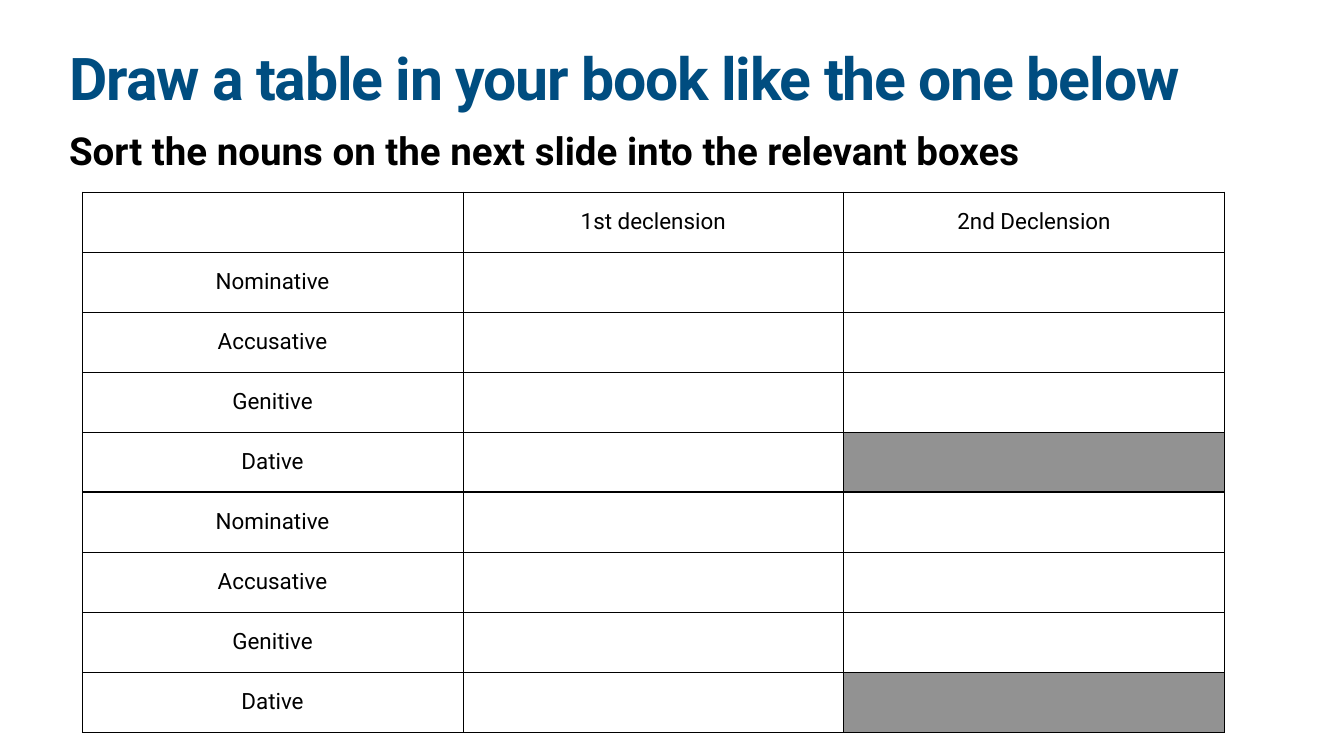
from lxml.etree import SubElement
from pptx import Presentation
from pptx.dml.color import RGBColor
from pptx.enum.text import MSO_ANCHOR, PP_ALIGN
from pptx.oxml.ns import qn
from pptx.util import Inches, Pt

FONT = "Roboto"
BLACK, BLUE, GREY = "000000", "004D80", "929292"
THIN, THICK = 1, 4

CASES = ["Nominative", "Accusative", "Genitive", "Dative"]
ROWS = [["", "1st declension", "2nd Declension"]] + [[case, "", ""] for case in CASES * 2]
GREY_CELLS = {(4, 2), (8, 2)}
LAST_SINGULAR_ROW = len(CASES)


def rgb(value):
    return RGBColor.from_string(value)


class SlideBuilder:
    def __init__(self, prs):
        self.s = prs.slides.add_slide(prs.slide_layouts[6])

    def style_run(self, r, size, color=BLACK, bold=False):
        r.font.name = FONT
        r.font.size = Pt(size)
        r.font.bold = bold
        r.font.color.rgb = rgb(color)

    def set_insets(self, target, inset):
        target.margin_left = target.margin_right = Inches(inset)
        target.margin_top = target.margin_bottom = Inches(inset)

    def text(self, words, left, top, width, height, size, color=BLACK, inset=0.05,
             anchor=MSO_ANCHOR.MIDDLE, line_spacing=1.0, tracking=0):
        sp = self.s.shapes.add_textbox(Inches(left), Inches(top), Inches(width), Inches(height))
        tf = sp.text_frame
        tf.word_wrap = True
        tf.vertical_anchor = anchor
        self.set_insets(tf, inset)
        tf.text = words
        p = tf.paragraphs[0]
        p.line_spacing = line_spacing
        r = p.runs[0]
        self.style_run(r, size, color, bold=True)
        if tracking:
            r.font._element.set("spc", str(round(tracking * 100)))

    def borders(self, cell, top, bottom):
        """Draw all four cell borders; top and bottom are widths in points."""
        tc_pr = cell._tc.get_or_add_tcPr()
        for side, width in (("L", THIN), ("R", THIN), ("T", top), ("B", bottom)):
            ln = SubElement(tc_pr, qn(f"a:ln{side}"), w=str(Pt(width)))
            fill = SubElement(ln, qn("a:solidFill"))
            SubElement(fill, qn("a:srgbClr"), val=BLACK)

    def cell(self, cell, words, fill, top, bottom):
        self.borders(cell, top, bottom)
        if fill:
            cell.fill.solid()
            cell.fill.fore_color.rgb = rgb(fill)
        else:
            cell.fill.background()
        cell.vertical_anchor = MSO_ANCHOR.MIDDLE
        self.set_insets(cell, 0.06)
        p = cell.text_frame.paragraphs[0]
        p.text = words
        p.alignment = PP_ALIGN.CENTER
        for r in p.runs:
            self.style_run(r, 32)

    def table(self, rows, left, top, width, height):
        frame = self.s.shapes.add_table(len(rows), len(rows[0]), Inches(left), Inches(top),
                                        Inches(width), Inches(height))
        table = frame.table
        table.first_row = table.horz_banding = False
        for i, row in enumerate(rows):
            above = THICK if i == LAST_SINGULAR_ROW + 1 else THIN
            below = THICK if i == LAST_SINGULAR_ROW else THIN
            for j, words in enumerate(row):
                fill = GREY if (i, j) in GREY_CELLS else None
                self.cell(table.cell(i, j), words, fill, above, below)


def main():
    prs = Presentation()
    prs.slide_width, prs.slide_height = Inches(26.67), Inches(15)
    slide = SlideBuilder(prs)
    slide.text("Draw a table in your book like the one below", 1.32, 1.04, 24.03, 1.57, 84.2,
               BLUE, inset=0.06, anchor=MSO_ANCHOR.TOP, line_spacing=0.8, tracking=-1.7)
    slide.text("Sort the nouns on the next slide into the relevant boxes",
               1.32, 2.46, 24.03, 1.02, 55)
    slide.table(ROWS, 1.63, 3.81, 22.67, 10.72)
    prs.save("out.pptx")


if __name__ == "__main__":
    main()
